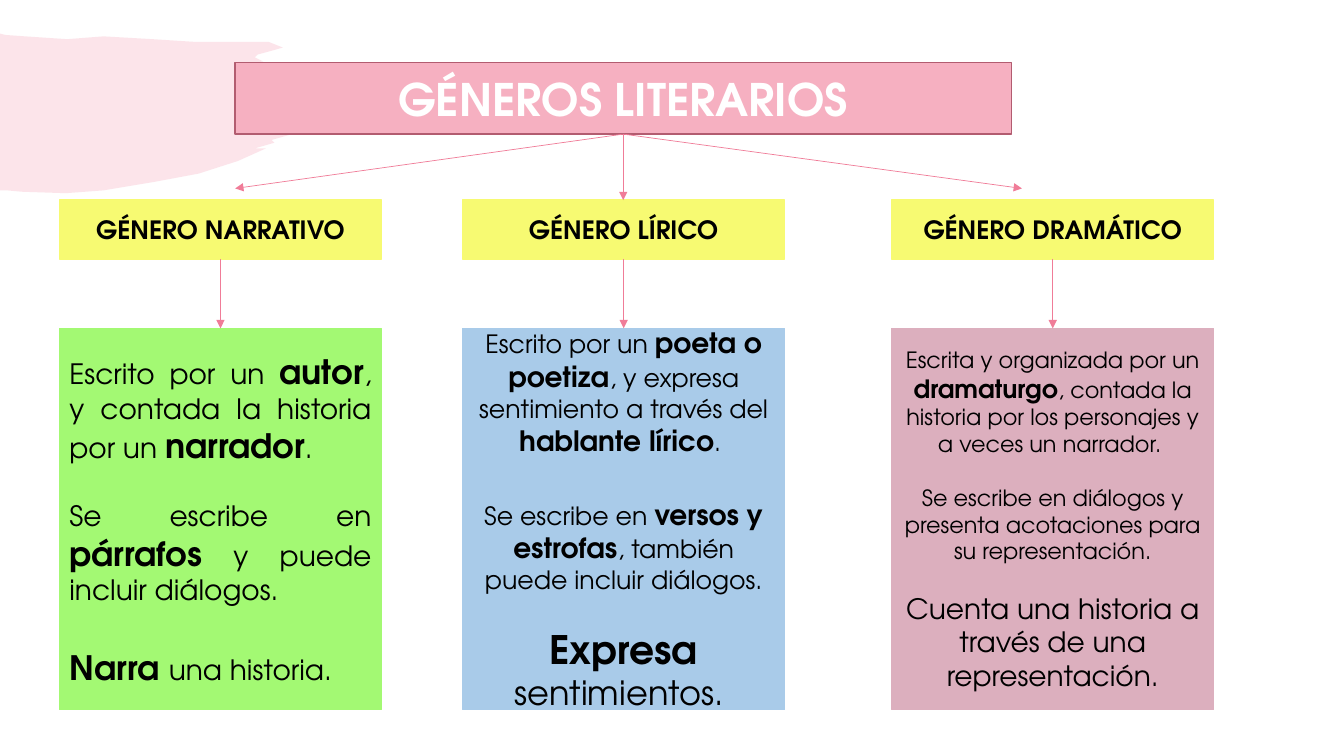
from lxml.etree import SubElement
from pptx import Presentation
from pptx.dml.color import RGBColor
from pptx.enum.shapes import MSO_CONNECTOR, MSO_SHAPE
from pptx.enum.text import MSO_ANCHOR, PP_ALIGN
from pptx.oxml.ns import qn
from pptx.util import Pt


def color(code):
    return RGBColor.from_string(code)


class Board:
    font = "TeX Gyre Adventor"
    pink = "F07C98"
    ink = "000000"
    lead = 1.2  # line height of the font, in ems

    def __init__(self, slide):
        self.slide = slide

    def brush(self, points, alpha):
        pen = self.slide.shapes.build_freeform(*points[0], scale=Pt(1))
        pen.add_line_segments(points[1:], close=True)
        shape = pen.convert_to_shape()
        shape.shadow.inherit = False
        shape.line.fill.background()
        shape.fill.solid()
        shape.fill.fore_color.rgb = color(self.pink)
        tint = shape.fill._xPr.find(".//" + qn("a:srgbClr"))
        SubElement(tint, qn("a:alpha")).set("val", str(alpha * 1000))

    def box(self, left, top, width, height, fill, edge=None):
        shape = self.slide.shapes.add_shape(
            MSO_SHAPE.RECTANGLE, Pt(left), Pt(top), Pt(width), Pt(height))
        shape.shadow.inherit = False
        shape.fill.solid()
        shape.fill.fore_color.rgb = color(fill)
        shape.line.color.rgb = color(edge or fill)
        shape.line.width = Pt(1)
        frame = shape.text_frame
        frame.word_wrap = True
        frame.vertical_anchor = MSO_ANCHOR.MIDDLE
        return frame

    def style(self, run, size, bold, ink):
        run.font.name = self.font
        run.font.size = Pt(size)
        run.font.bold = bold
        run.font.color.rgb = color(ink)

    def label(self, frame, text, size, ink):
        frame.text = text
        par = frame.paragraphs[0]
        par.alignment = PP_ALIGN.CENTER
        self.style(par.runs[0], size, True, ink)

    def body(self, frame, parts, align):
        """Each part: text with *bold* words, size, bold size, gap before in ems."""
        for i, (text, size, big, gap) in enumerate(parts):
            par = frame.add_paragraph() if i else frame.paragraphs[0]
            par.alignment = align
            par.space_before = Pt(gap * self.lead)
            for j, piece in enumerate(text.split("*")):
                if piece:
                    run = par.add_run()
                    run.text = piece
                    bold = j % 2 == 1
                    self.style(run, big if bold else size, bold, self.ink)

    def arrow(self, x1, y1, x2, y2):
        line = self.slide.shapes.add_connector(
            MSO_CONNECTOR.STRAIGHT, Pt(x1), Pt(y1), Pt(x2), Pt(y2))
        line.line.color.rgb = color(self.pink)
        line.line.width = Pt(0.5)
        SubElement(line.line._get_or_add_ln(), qn("a:tailEnd")).set("type", "triangle")
        SubElement(line._element.spPr, qn("a:effectLst"))


STROKE = [
    (0, 24.5), (4, 25), (18, 26.5), (47.5, 27.5), (73.5, 26.5), (109, 27.5),
    (140, 29.5), (160, 30), (178.5, 29.5), (192, 30), (201.5, 34), (195, 35.5),
    (183.5, 39), (182, 41), (184.5, 42.5), (188.5, 44.5), (178, 45), (171.5, 47.5),
    (177, 49), (184.5, 50.5), (191.5, 51), (198, 53.5), (180.5, 54), (189.5, 56),
    (196.5, 58.5), (201.5, 59), (207.5, 60), (209, 61), (206.5, 63.5), (189.5, 63.5),
    (212, 67), (237.5, 67.5), (231, 70), (229, 76.5), (221, 80), (216, 81.5),
    (204, 83.5), (201.5, 86.5), (200, 90), (197.5, 92), (222, 92), (193.5, 99.5),
    (196.5, 102), (181.5, 106.5), (189.5, 106.5), (170, 115), (142, 124),
    (110, 130), (73.5, 135.5), (47, 137.5), (16.5, 137), (5, 136), (0, 135.5),
]

# Heading, left edge, colour, alignment and text of each genre
GENRES = [
    ("GÉNERO NARRATIVO", 42.5, "A3F973", PP_ALIGN.JUSTIFY, [
        ("Escrito por un *autor*, y contada la historia por un *narrador*. ", 20, 24, 0),
        ("Se escribe en *párrafos* y puede incluir diálogos. ", 20, 24, 20),
        ("*Narra *una historia. ", 20, 24, 24)]),
    ("GÉNERO LÍRICO", 330.5, "A9CBE9", PP_ALIGN.CENTER, [
        ("Escrito por un *poeta o poetiza*, y expresa sentimiento a través del "
         "*hablante lírico*. ", 18, 20, 0),
        ("Se escribe en *versos y estrofas*, también puede incluir diálogos.", 18, 20, 24),
        ("*Expresa *sentimientos. ", 24, 28, 18)]),
    ("GÉNERO DRAMÁTICO", 637, "DCAFBE", PP_ALIGN.CENTER, [
        ("Escrita y organizada por un *dramaturgo*, contada la historia por los "
         "personajes y a veces un narrador. ", 16, 18, 0),
        ("Se escribe en diálogos y presenta acotaciones para su representación.",
         16, 18, 16),
        ("Cuenta una historia a través de una representación.", 20, 20, 16)]),
]
WIDE = 230
HEAD, FOOT = 143, 185  # top and bottom of the headings
TEXT = 234.5  # top of the text boxes
MID, BASE = 445.2, 95.8  # middle of the title's lower edge


def main():
    deck = Presentation()
    deck.slide_width, deck.slide_height = Pt(960), Pt(540)
    board = Board(deck.slides.add_slide(deck.slide_layouts[6]))

    # Brush stroke and title
    board.brush(STROKE, 20)
    title = board.box(168, 44.7, 554.4, 51.1, "F6B0C1", "B25C70")
    board.label(title, "GÉNEROS LITERARIOS", 32, "FFFFFF")

    # One column per genre
    for name, left, fill, align, parts in GENRES:
        head = board.box(left, HEAD, WIDE, FOOT - HEAD, "F7FA72")
        board.label(head, name, 18, board.ink)
        board.body(board.box(left, TEXT, WIDE, 272.5, fill), parts, align)
        board.arrow(left + WIDE / 2, FOOT, left + WIDE / 2, TEXT)

    # Arrows from the title
    for x, y in [(MID, HEAD), (168, 134.6), (730, 134.6)]:
        board.arrow(MID, BASE, x, y)

    deck.save("out.pptx")


if __name__ == "__main__":
    main()
